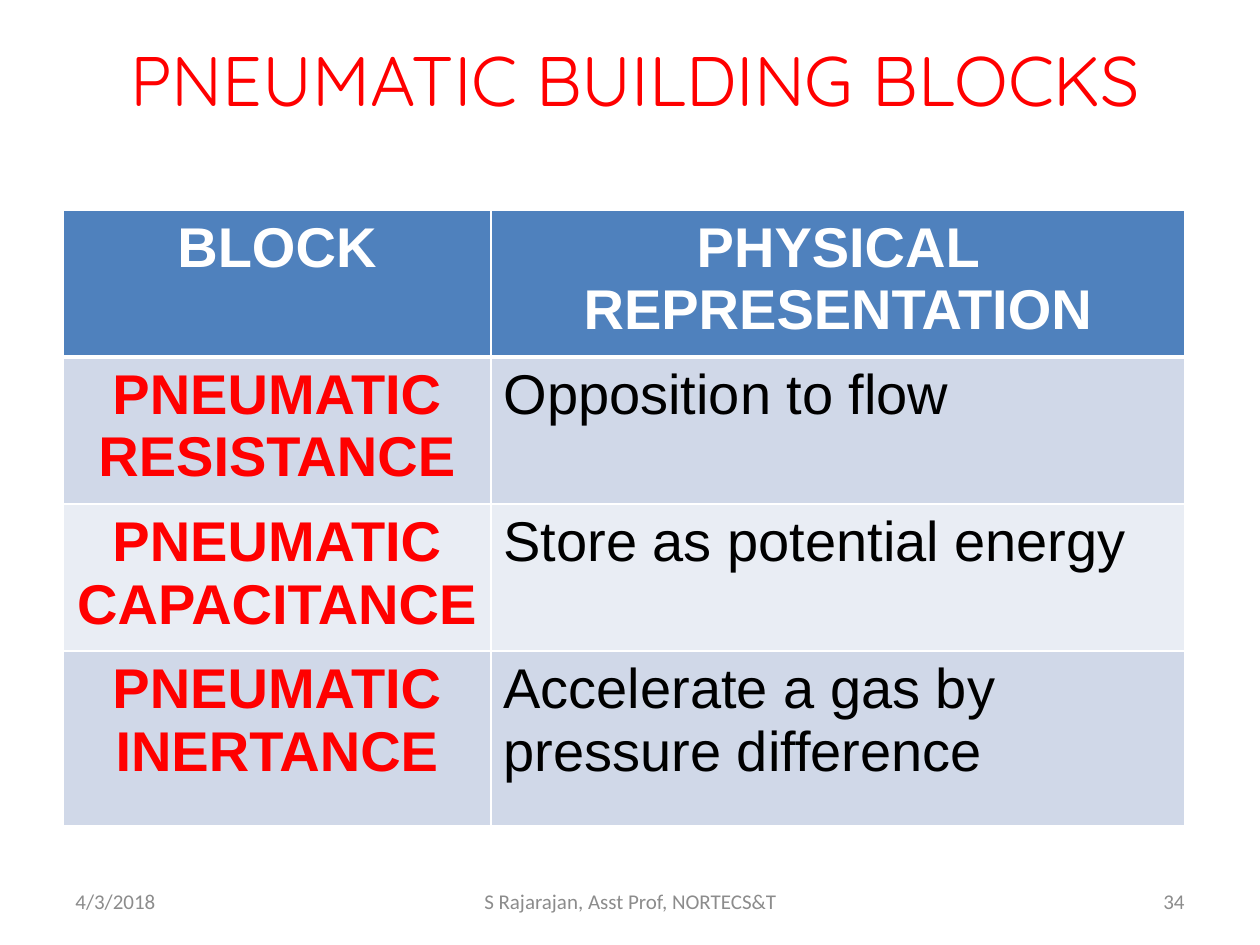
from lxml.etree import SubElement
from pptx import Presentation
from pptx.dml.color import RGBColor
from pptx.enum.text import MSO_ANCHOR as Anchor, PP_ALIGN as Align
from pptx.oxml.ns import qn
from pptx.util import Pt

EMU_PER_PX = 914400 / 126
RED, WHITE, BLACK, GREY = "FF0000", "FFFFFF", "000000", "8C8C8C"
HEADER_FILL = "4F81BD"
BAND_FILLS = ["D0D8E8", "E9EDF4"]
COLUMN_WIDTHS = [428, 694]
ROW_HEIGHTS = [138, 138, 138, 175]
BLOCKS = [
    ("BLOCK", "PHYSICAL REPRESENTATION"),
    ("PNEUMATIC RESISTANCE", "Opposition to flow"),
    ("PNEUMATIC CAPACITANCE", "Store as potential energy"),
    ("PNEUMATIC INERTANCE", "Accelerate a gas by pressure difference"),
]
FOOTERS = [
    ("4/3/2018", 63, 294, Align.LEFT),
    ("S Rajarajan, Asst Prof, NORTECS&T", 431, 399, Align.CENTER),
    ("34", 903, 294, Align.RIGHT),
]


def px(length):
    return round(length * EMU_PER_PX)


def color(value):
    return RGBColor.from_string(value)


def write(frame, text, font, size, text_color, align, bold=False):
    frame.word_wrap = True
    paragraph = frame.paragraphs[0]
    paragraph.alignment = align
    run = paragraph.add_run()
    run.text = text
    run.font.name = font
    run.font.size = Pt(size)
    run.font.bold = bold
    run.font.color.rgb = color(text_color)


def add_text(slide, box, anchor, text, font, size, text_color, align):
    shape = slide.shapes.add_textbox(*map(px, box))
    frame = shape.text_frame
    frame.vertical_anchor = anchor
    write(frame, text, font, size, text_color, align)
    return frame


def add_border(cell, side, points):
    properties = cell._tc.get_or_add_tcPr()
    line = SubElement(properties, qn(f"a:ln{side}"), w=str(Pt(points)))
    fill = SubElement(line, qn("a:solidFill"))
    SubElement(fill, qn("a:srgbClr"), val=WHITE)


def style_cell(cell, row, column, text):
    header = row == 0
    label = header or column == 0
    for side in "LRTB":
        under_header = (row, side) in [(0, "B"), (1, "T")]
        add_border(cell, side, 3 if under_header else 1)
    cell.fill.solid()
    cell.fill.fore_color.rgb = color(HEADER_FILL if header else BAND_FILLS[(row - 1) % 2])
    text_color = WHITE if header else RED if label else BLACK
    align = Align.CENTER if label else Align.LEFT
    write(cell.text_frame, text, "Arial", 32, text_color, align, label)


def add_block_table(slide, left, top):
    size = sum(COLUMN_WIDTHS), sum(ROW_HEIGHTS)
    table = slide.shapes.add_table(
        len(BLOCKS), len(COLUMN_WIDTHS), *map(px, (left, top, *size))
    ).table
    for column, width in zip(table.columns, COLUMN_WIDTHS):
        column.width = px(width)
    for row, height in zip(table.rows, ROW_HEIGHTS):
        row.height = px(height)
    for row, texts in enumerate(BLOCKS):
        for column, text in enumerate(texts):
            style_cell(table.cell(row, column), row, column, text)


def main():
    presentation = Presentation()
    presentation.slide_width, presentation.slide_height = px(1260), px(945)
    slide = presentation.slides.add_slide(presentation.slide_layouts[6])
    title = add_text(slide, (-63, 105, 1396, 32), Anchor.BOTTOM,
                     "PNEUMATIC BUILDING BLOCKS", "Quicksand", 40, RED, Align.CENTER)
    title.margin_top, title.margin_bottom = 0, px(17)
    add_block_table(slide, 63, 210)
    for text, left, width, align in FOOTERS:
        add_text(slide, (left, 876, width, 50), Anchor.MIDDLE,
                 text, "Calibri", 12, GREY, align)
    presentation.save("out.pptx")


if __name__ == "__main__":
    main()
